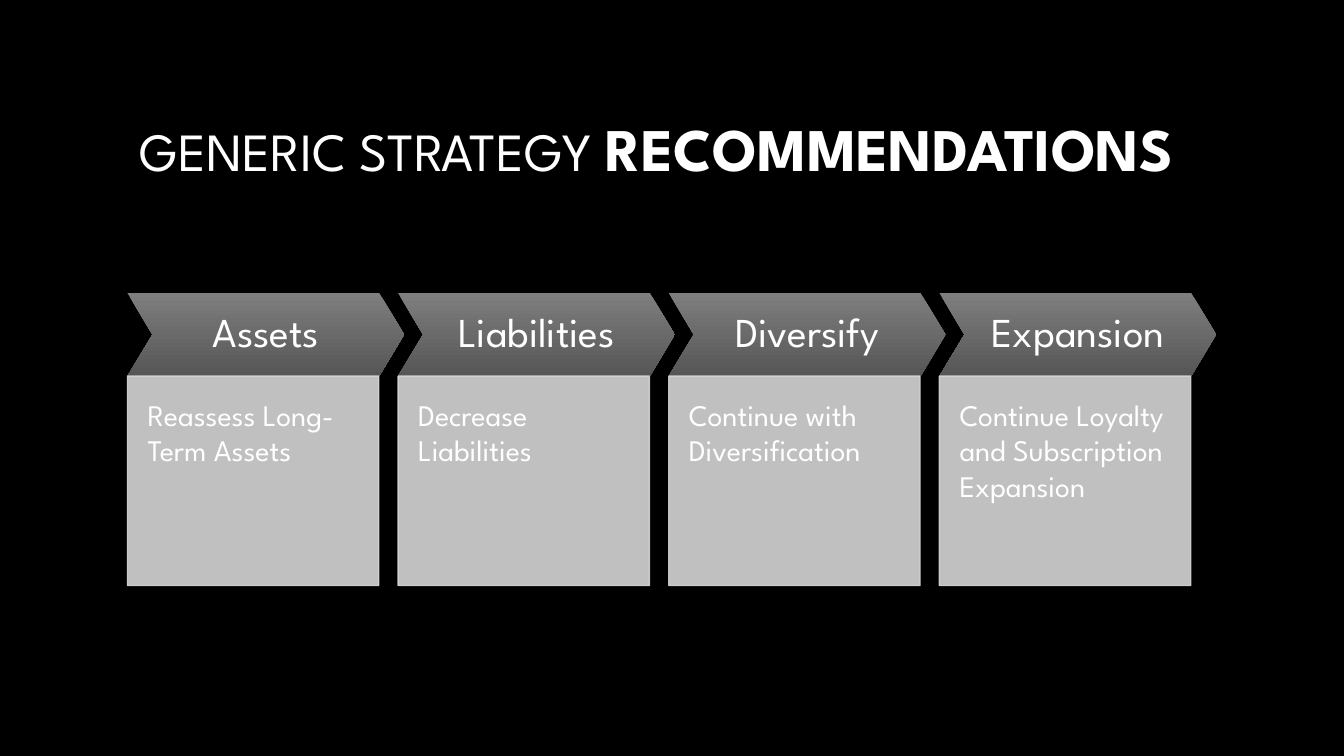
import pptx
import pptx.util
import pptx.dml.color
import pptx.enum.shapes
import pptx.enum.text
import pptx.oxml
import pptx.oxml.ns
from pptx.util import Cm, Pt

FONT = "League Spartan"
WHITE = "FFFFFF"
PANEL = "D5D5D5"
TITLE = [("GENERIC STRATEGY ", 28.8, False), ("RECOMMENDATIONS", 32.4, True)]
STEPS = [
    ("Assets", "Reassess Long-Term Assets"),
    ("Liabilities", "Decrease Liabilities"),
    ("Diversify", "Continue with Diversification"),
    ("Expansion", "Continue Loyalty and Subscription Expansion"),
]
LEFT, TOP, PITCH = 2.41, 5.54, 5.115
CHEVRON_W, CHEVRON_H = 5.23, 1.57
PANEL_W, PANEL_H = 4.75, 3.96
SHADOW = (
    '<a:effectLst %s><a:outerShdw blurRad="50800" dist="38100" dir="2700000">'
    '<a:srgbClr val="000000"><a:alpha val="40000"/></a:srgbClr>'
    "</a:outerShdw></a:effectLst>" % pptx.oxml.ns.nsdecls("a")
)


def rgb(value):
    return pptx.dml.color.RGBColor.from_string(value)


def style(font, size, bold=False):
    font.name = FONT
    font.size = Pt(size)
    font.bold = bold
    font.color.rgb = rgb(WHITE)


def set_alpha(fill_parent, percent):
    color = fill_parent.find(".//" + pptx.oxml.ns.qn("a:srgbClr"))
    color.append(pptx.oxml.parse_xml(
        '<a:alpha %s val="%d"/>' % (pptx.oxml.ns.nsdecls("a"), percent * 1000)))


def add_block(s, kind, x, y, w, h, text, size, align, anchor, inset, bottom):
    sp = s.shapes.add_shape(kind, Cm(x), Cm(y), Cm(w), Cm(h))
    sp.shadow.inherit = False
    tf = sp.text_frame
    tf.word_wrap = True
    tf.vertical_anchor = anchor
    tf.margin_left = tf.margin_right = tf.margin_top = Cm(inset)
    tf.margin_bottom = Cm(bottom)
    p = tf.paragraphs[0]
    p.text = text
    p.alignment = align
    style(p.font, size)
    return sp


def add_title(s):
    sp = s.shapes.add_textbox(Cm(2.39), Cm(1.27), Cm(20.62), Cm(3.05))
    tf = sp.text_frame
    tf.word_wrap = True
    tf.vertical_anchor = pptx.enum.text.MSO_ANCHOR.MIDDLE
    p = tf.paragraphs[0]
    for text, size, bold in TITLE:
        r = p.add_run()
        r.text = text
        style(r.font, size, bold)
        fill = r.font._element.find(pptx.oxml.ns.qn("a:solidFill"))
        fill.addnext(pptx.oxml.parse_xml(SHADOW))


def add_step(s, x, heading, detail):
    shapes, align = pptx.enum.shapes.MSO_SHAPE, pptx.enum.text.PP_ALIGN
    anchor = pptx.enum.text.MSO_ANCHOR
    chevron = add_block(s, shapes.CHEVRON, x, TOP, CHEVRON_W, CHEVRON_H,
                        heading, 22, align.CENTER, anchor.MIDDLE, 0.2, 0.2)
    chevron.adjustments[0] = 0.3
    chevron.text_frame.paragraphs[0].line_spacing = 0.9
    chevron.line.fill.background()
    chevron.fill.gradient()
    chevron.fill.gradient_angle = 270
    for stop, color in zip(chevron.fill.gradient_stops, ("7E7E7E", "565656")):
        stop.color.rgb = rgb(color)

    panel = add_block(s, shapes.RECTANGLE, x, TOP + CHEVRON_H, PANEL_W, PANEL_H,
                      detail, 16, align.LEFT, anchor.TOP, 0.38, 0.76)
    panel.fill.solid()
    panel.fill.fore_color.rgb = rgb(PANEL)
    panel.line.color.rgb = rgb(PANEL)
    panel.line.width = Pt(0.75)
    properties = panel._element.spPr
    for tag in ("a:solidFill", "a:ln"):
        set_alpha(properties.find(pptx.oxml.ns.qn(tag)), 90)


def main():
    prs = pptx.Presentation()
    prs.slide_width, prs.slide_height = Cm(25.4), Cm(14.29)
    s = prs.slides.add_slide(prs.slide_layouts[6])
    s.background.fill.solid()
    s.background.fill.fore_color.rgb = rgb("000000")
    add_title(s)
    for i, (heading, detail) in enumerate(STEPS):
        add_step(s, LEFT + i * PITCH, heading, detail)
    prs.save("out.pptx")


if __name__ == "__main__":
    main()
